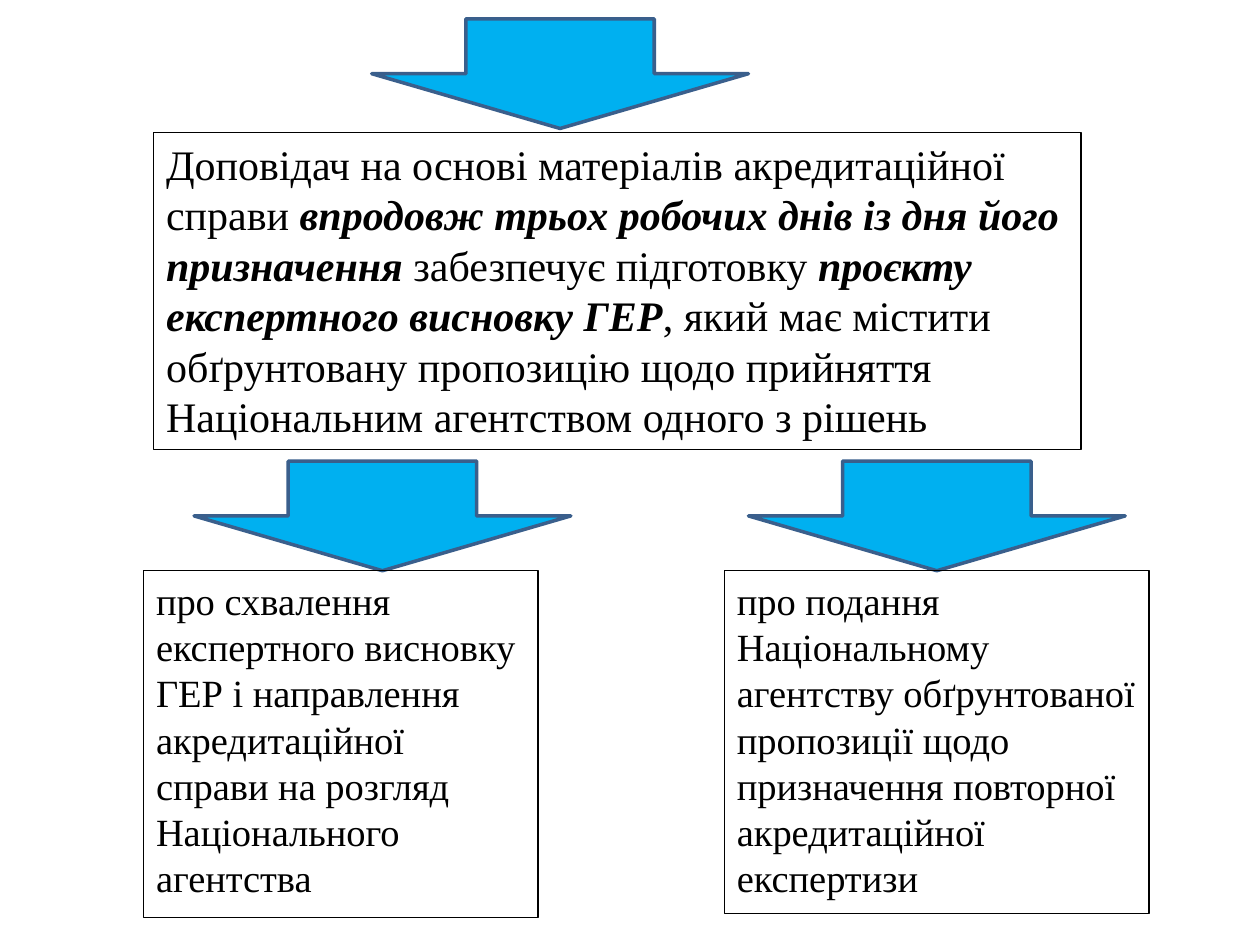
from dataclasses import dataclass

import pptx
import pptx.dml.color
import pptx.enum.shapes
import pptx.enum.text
import pptx.util
from pptx.util import Inches

COLORS = {"arrow": "00B0F0", "arrow_edge": "3A5F8C", "ink": "000000"}
FONT = "Times New Roman"
ARROW_WIDTH, ARROW_HEIGHT = 2.99, 0.87


@dataclass
class Run:
    text: str
    emphasis: bool = False


@dataclass
class Box:
    left: float
    top: float
    width: float
    height: float
    size: int
    runs: list[Run]


@dataclass
class Arrow:
    left: float
    top: float


ARROWS = [Arrow(2.95, 0.15), Arrow(1.54, 3.66), Arrow(5.94, 3.66)]

REPORTER = Box(1.22, 1.05, 7.36, 2.52, 24, [
    Run("Доповідач на основі матеріалів акредитаційної справи "),
    Run("впродовж трьох робочих днів із дня його призначення ", True),
    Run("забезпечує підготовку "),
    Run("проєкту експертного висновку ГЕР", True),
    Run(", який має містити обґрунтовану пропозицію щодо прийняття "
        "Національним агентством одного з рішень"),
])
APPROVAL = Box(1.14, 4.53, 3.13, 2.75, 22, [
    Run("про схвалення експертного висновку ГЕР і направлення "
        "акредитаційної справи на розгляд Національного агентства"),
])
REPEAT_REVIEW = Box(5.75, 4.53, 3.37, 2.72, 22, [
    Run("про подання Національному агентству обґрунтованої пропозиції "
        "щодо призначення повторної акредитаційної експертизи"),
])


def rgb(name: str) -> pptx.dml.color.RGBColor:
    return pptx.dml.color.RGBColor.from_string(COLORS[name])


def add_run(paragraph, text: str, *, size: int, emphasis: bool = False,
            color: str = "ink") -> None:
    run = paragraph.add_run()
    run.text = text
    run.font.name = FONT
    run.font.size = pptx.util.Pt(size)
    run.font.bold = run.font.italic = emphasis
    run.font.color.rgb = rgb(color)


def draw_arrow(slide, arrow: Arrow) -> None:
    shape = slide.shapes.add_shape(
        pptx.enum.shapes.MSO_SHAPE.DOWN_ARROW, Inches(arrow.left),
        Inches(arrow.top), Inches(ARROW_WIDTH), Inches(ARROW_HEIGHT))
    shape.shadow.inherit = False
    shape.fill.solid()
    shape.fill.fore_color.rgb = rgb("arrow")
    shape.line.color.rgb = rgb("arrow_edge")
    shape.line.width = pptx.util.Pt(2)


def draw_box(slide, box: Box) -> None:
    frame = slide.shapes.add_textbox(
        Inches(box.left), Inches(box.top), Inches(box.width), Inches(box.height))
    frame.line.color.rgb = rgb("ink")
    frame.line.width = pptx.util.Pt(0.75)
    frame.text_frame.word_wrap = True
    frame.text_frame.vertical_anchor = pptx.enum.text.MSO_ANCHOR.TOP
    paragraph = frame.text_frame.paragraphs[0]
    paragraph.alignment = pptx.enum.text.PP_ALIGN.LEFT
    for run in box.runs:
        add_run(paragraph, run.text, size=box.size, emphasis=run.emphasis)


def main() -> None:
    deck = pptx.Presentation()
    deck.slide_width, deck.slide_height = Inches(10), Inches(7.5)
    slide = deck.slides.add_slide(deck.slide_layouts[6])

    # Arrows leading into the report and its two outcomes
    for arrow in ARROWS:
        draw_arrow(slide, arrow)

    # The reporter's task, then the two possible decisions
    for box in (REPORTER, APPROVAL, REPEAT_REVIEW):
        draw_box(slide, box)

    deck.save("out.pptx")


if __name__ == "__main__":
    main()
